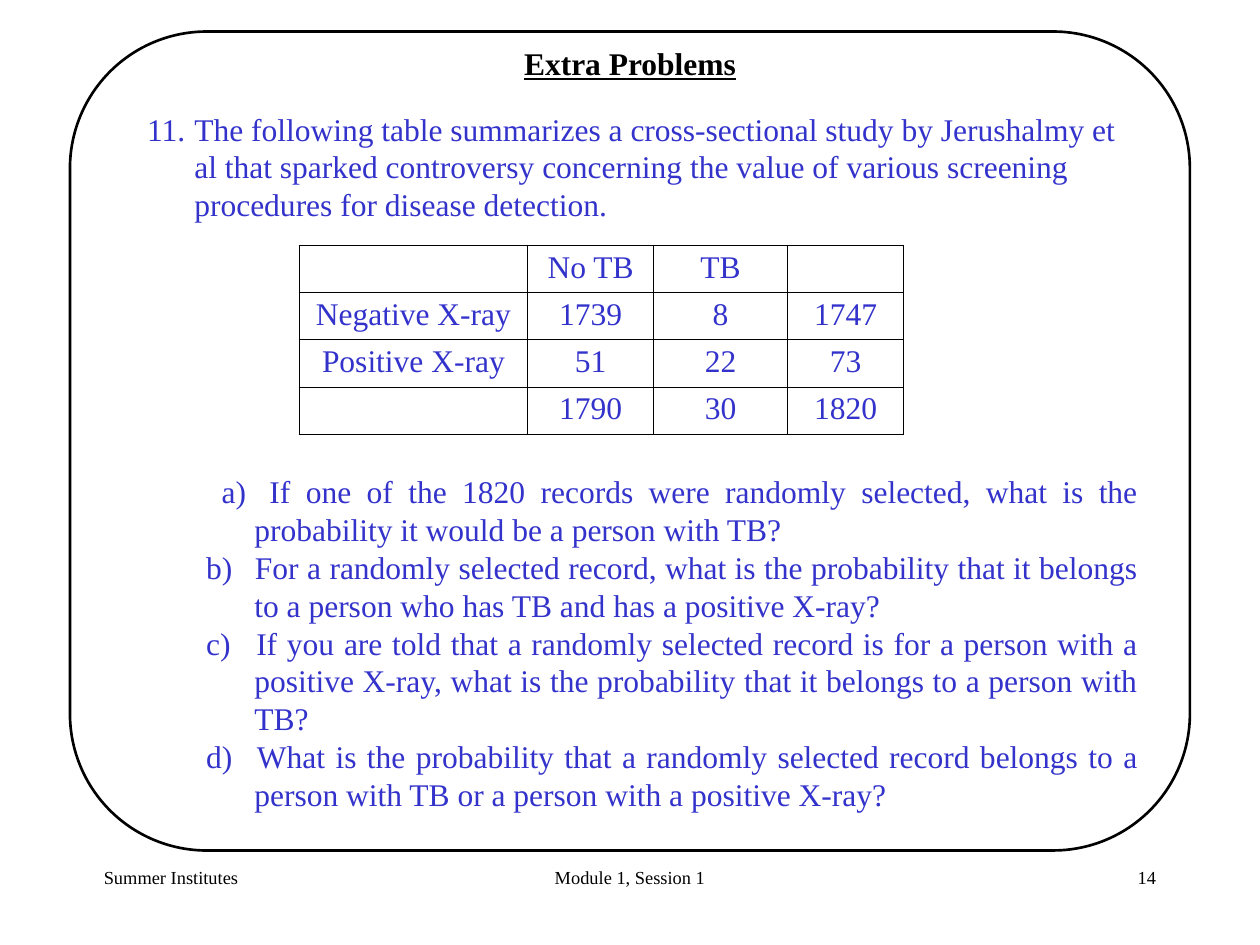
from lxml import etree
from pptx import Presentation
from pptx.dml.color import RGBColor
from pptx.enum.shapes import MSO_SHAPE as SHAPE
from pptx.enum.text import MSO_AUTO_SIZE as AUTO, PP_ALIGN as ALIGN
from pptx.oxml import parse_xml
from pptx.oxml.ns import nsdecls, qn
from pptx.util import Pt

BLACK, BLUE = "000000", "3333CC"
FONT = "Times New Roman"
INTRO = ("The following table summarizes a cross-sectional study by Jerushalmy et al "
         "that sparked controversy concerning the value of various screening "
         "procedures for disease detection.")
QUESTIONS = [
    " a) \tIf one of the 1820 records were randomly selected, what is the "
    "probability it would be a person with TB?",
    "b) \tFor a randomly selected record, what is the probability that it belongs "
    "to a person who has TB and has a positive X-ray?",
    "c) \tIf you are told that a randomly selected record is for a person with a "
    "positive X-ray, what is the probability that it belongs to a person with TB?",
    "d) \tWhat is the probability that a randomly selected record belongs to a "
    "person with TB or a person with a positive X-ray?",
]
COUNTS = [
    ["", "No TB", "TB", ""],
    ["Negative X-ray", "1739", "8", "1747"],
    ["Positive X-ray", "51", "22", "73"],
    ["", "1790", "30", "1820"],
]
COL_WIDTHS = [174, 96, 102, 88.5]
ROW_HEIGHT = 36


def rgb(color):
    return RGBColor.from_string(color)


def style(p, size, color, align):
    p.alignment = align
    p.font.name = FONT
    p.font.size = Pt(size)
    p.font.color.rgb = rgb(color)


def add_text(s, box, lines, size=24, color=BLACK, align=ALIGN.LEFT):
    tf = s.shapes.add_textbox(*map(Pt, box)).text_frame
    tf.word_wrap = True
    tf.auto_size = AUTO.NONE
    for i, line in enumerate(lines):
        p = tf.add_paragraph() if i else tf.paragraphs[0]
        p.text = line
        style(p, size, color, align)
    return tf.paragraphs


def hang(p, indent):
    pPr = p._p.get_or_add_pPr()
    pPr.set("marL", str(Pt(indent)))
    pPr.set("indent", str(-Pt(indent)))
    return pPr


def number_from(p, start, indent):
    bullet = etree.SubElement(hang(p, indent), qn("a:buAutoNum"),
                              type="arabicPeriod", startAt=str(start))
    p._p.pPr.insert(0, bullet)


def add_frame(s):
    sp = s.shapes.add_shape(SHAPE.ROUNDED_RECTANGLE, Pt(53.3), Pt(24), Pt(853.3), Pt(624))
    sp.adjustments[0] = 0.167
    sp.shadow.inherit = False
    sp.fill.background()
    sp.line.color.rgb = rgb(BLACK)
    sp.line.width = Pt(2)


def border_cell(cell, color, width):
    tcPr = cell._tc.get_or_add_tcPr()
    for i, side in enumerate("LRTB"):
        tcPr.insert(i, parse_xml(
            f'<a:ln{side} {nsdecls("a")} w="{Pt(width)}"><a:solidFill>'
            f'<a:srgbClr val="{color}"/></a:solidFill></a:ln{side}>'))


def add_counts(s, left, top):
    table = s.shapes.add_table(len(COUNTS), len(COL_WIDTHS), Pt(left), Pt(top),
                               Pt(sum(COL_WIDTHS)), Pt(ROW_HEIGHT * len(COUNTS))).table
    table.first_row = table.horz_banding = False
    for col, width in zip(table.columns, COL_WIDTHS):
        col.width = Pt(width)
    for row, values in zip(table.rows, COUNTS):
        row.height = Pt(ROW_HEIGHT)
        for cell, value in zip(row.cells, values):
            cell.fill.background()
            border_cell(cell, BLACK, 1)
            if value:
                cell.text = value
                style(cell.text_frame.paragraphs[0], 24, BLUE, ALIGN.CENTER)


def main():
    prs = Presentation()
    prs.slide_width, prs.slide_height = Pt(960), Pt(720)
    s = prs.slides.add_slide(prs.slide_layouts[6])
    add_frame(s)

    # Title
    title = add_text(s, (366, 30, 228, 36), ["Extra Problems"], align=ALIGN.CENTER)[0]
    title.font.bold = title.font.underline = True

    # Problem, its data and its questions
    intro = add_text(s, (105, 80, 772.5, 94), [INTRO], color=BLUE)[0]
    number_from(intro, 11, 36)
    add_counts(s, 228, 187)
    for p in add_text(s, (150, 356.4, 724, 269), QUESTIONS, color=BLUE, align=ALIGN.JUSTIFY):
        hang(p, 36.7)

    # Footer
    for left, width, text, align in [(72, 200, "Summer Institutes", ALIGN.LEFT),
                                     (328, 304, "Module 1, Session 1", ALIGN.CENTER),
                                     (688, 200, "14", ALIGN.RIGHT)]:
        add_text(s, (left, 656, width, 48), [text], 14, align=align)

    prs.save("out.pptx")


if __name__ == "__main__":
    main()
